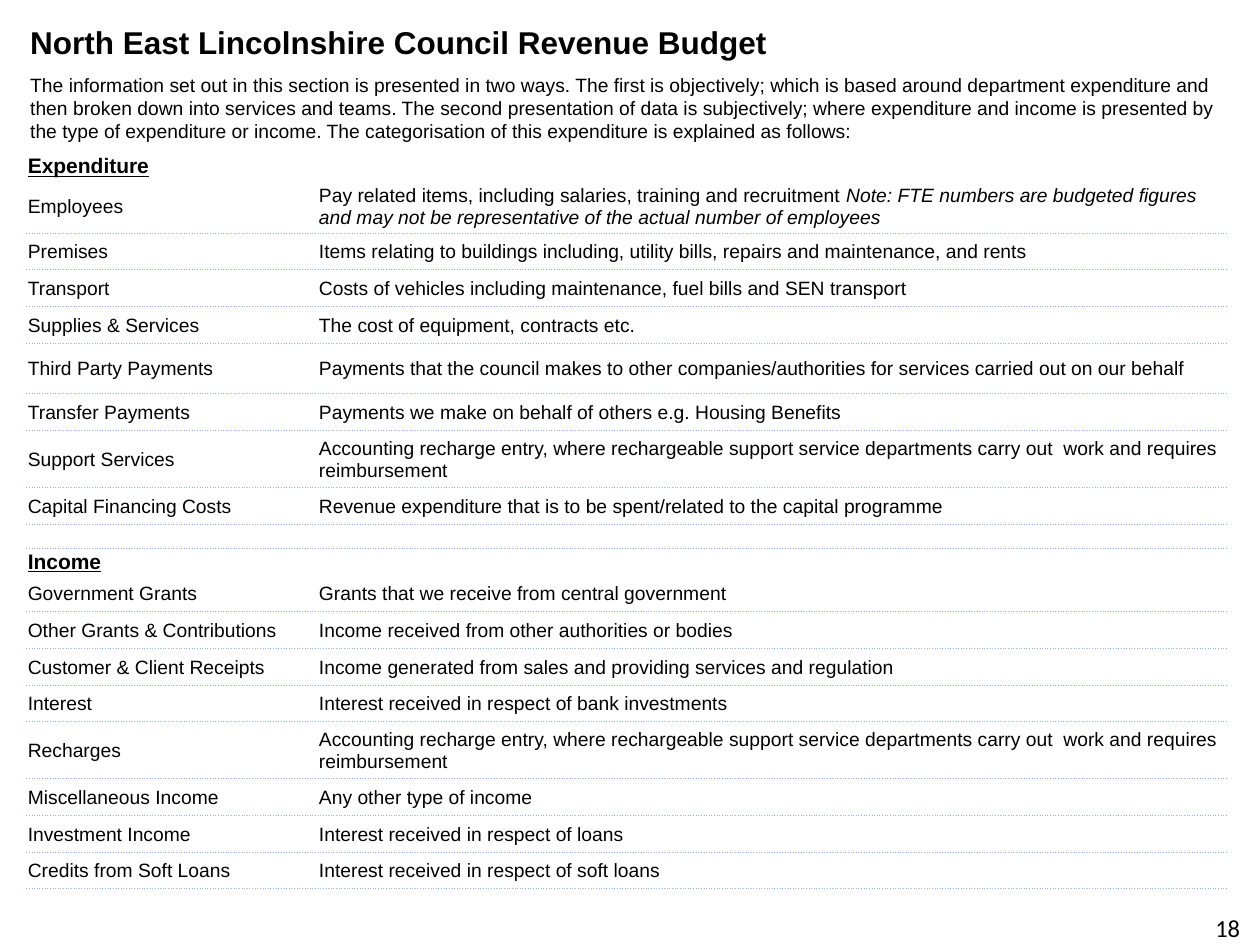
from dataclasses import dataclass

from lxml import etree
from pptx import Presentation
from pptx.dml.color import RGBColor
from pptx.enum.text import MSO_ANCHOR, PP_ALIGN
from pptx.oxml.ns import qn
from pptx.util import Cm, Pt

MIDDLE = MSO_ANCHOR.MIDDLE
LEFT, CENTER = PP_ALIGN.LEFT, PP_ALIGN.CENTER
NO_GRID_STYLE = "{2D5ABB26-0587-4C30-8999-92F81FD0307C}"


@dataclass(frozen=True)
class Theme:
    ink: str = "000000"
    rule: str = "8DB3E2"
    rule_width: float = 0.5
    font: str = "Arial"
    number_font: str = "Calibri"
    title: int = 18
    number: int = 14
    heading: int = 12
    body: int = 11
    spacer: int = 8


COLUMNS = (5.49, 0.38, 16.64, 1.68)
HEADING_ROW, SPACER_ROW, ENTRY_ROW = 0.53, 0.48, 0.74

INTRO = (
    "The information set out in this section is presented in two ways. The first is objectively; "
    "which is based around department expenditure and then broken down into services and teams. "
    "The second presentation of data is subjectively; where expenditure and income is presented by "
    "the type of expenditure or income. The categorisation of this expenditure is explained as follows:"
)
RECHARGE = (
    "Accounting recharge entry, where rechargeable support service departments carry out  "
    "work and requires reimbursement"
)
EMPLOYEE_NOTE = (
    "Note: FTE numbers are budgeted figures and may not be representative of the actual number of employees"
)
SECTIONS = {
    "Expenditure": (
        ("Employees", "Pay related items, including salaries, training and recruitment "),
        ("Premises", "Items relating to buildings including, utility bills, repairs and maintenance, and rents"),
        ("Transport", "Costs of vehicles including maintenance, fuel bills and SEN transport"),
        ("Supplies & Services", "The cost of equipment, contracts etc."),
        ("Third Party Payments", "Payments that the council makes to other companies/authorities "
                                 "for services carried out on our behalf"),
        ("Transfer Payments", "Payments we make on behalf of others e.g. Housing Benefits"),
        ("Support Services", RECHARGE),
        ("Capital Financing Costs", "Revenue expenditure that is to be spent/related to the capital programme"),
    ),
    "Income": (
        ("Government Grants", "Grants that we receive from central government"),
        ("Other Grants & Contributions", "Income received from other authorities or bodies"),
        ("Customer & Client Receipts", "Income generated from sales and providing services and regulation"),
        ("Interest", "Interest received in respect of bank investments"),
        ("Recharges", RECHARGE),
        ("Miscellaneous Income", "Any other type of income"),
        ("Investment Income", "Interest received in respect of loans"),
        ("Credits from Soft Loans", "Interest received in respect of soft loans"),
    ),
}
NOTES = {"Employees": EMPLOYEE_NOTE}
TALL_ROWS = {"Employees": 1.09, "Third Party Payments": 1.02, "Support Services": 1.15, "Recharges": 1.15}


class SlideWriter:
    def __init__(self, slide, theme):
        self.slide = slide
        self.theme = theme

    def style(self, span, size, font=None, bold=False, italic=False, underline=False):
        span.font.name = font or self.theme.font
        span.font.size = Pt(size)
        span.font.color.rgb = RGBColor.from_string(self.theme.ink)
        span.font.bold = bold
        span.font.italic = italic
        span.font.underline = underline

    def text(self, left, top, width, height, words, size, align=LEFT, **look):
        box = self.slide.shapes.add_textbox(Cm(left), Cm(top), Cm(width), Cm(height))
        box.text_frame.word_wrap = True
        box.text_frame.text = words
        para = box.text_frame.paragraphs[0]
        para.alignment = align
        self.style(para.runs[0], size, **look)

    def table(self, left, top, columns, heights):
        frame = self.slide.shapes.add_table(
            len(heights), len(columns), Cm(left), Cm(top), Cm(sum(columns)), Cm(sum(heights)))
        table = frame.table
        table.first_row = table.horz_banding = False
        table._tbl.tblPr.find(qn("a:tableStyleId")).text = NO_GRID_STYLE
        for column, width in zip(table.columns, columns):
            column.width = Cm(width)
        for row, height in zip(table.rows, heights):
            row.height = Cm(height)
        for cell in table.iter_cells():
            cell.margin_left = cell.margin_right = cell.margin_top = Cm(0.03)
            cell.margin_bottom = 0
            cell.vertical_anchor = MIDDLE
            cell.fill.background()
            # An empty cell must not stretch its row
            end = cell.text_frame.paragraphs[0]._p.get_or_add_endParaRPr()
            end.set("sz", str(self.theme.spacer * 100))
        return table

    def cell_text(self, cell, words, size, note=None, **look):
        cell.text_frame.text = words
        para = cell.text_frame.paragraphs[0]
        self.style(para.runs[0], size, **look)
        if note:
            span = para.add_run()
            span.text = note
            self.style(span, size, italic=True)

    def row_rule(self, row, side):
        """Draw a dotted rule along one side, lnT or lnB, of every cell in a row."""
        for cell in row.cells:
            properties = cell._tc.get_or_add_tcPr()
            line = etree.Element(qn(f"a:{side}"), w=str(Pt(self.theme.rule_width)))
            fill = etree.SubElement(line, qn("a:solidFill"))
            etree.SubElement(fill, qn("a:srgbClr"), val=self.theme.rule)
            etree.SubElement(line, qn("a:prstDash"), val="sysDot")
            properties.insert(len(properties.findall(qn("a:lnT"))), line)

    def budget_table(self, left, top):
        rows = []
        for heading, entries in SECTIONS.items():
            if rows:
                rows.append(("spacer", "", "", SPACER_ROW))
            rows.append(("heading", heading, "", HEADING_ROW))
            rows += [("entry", name, meaning, TALL_ROWS.get(name, ENTRY_ROW)) for name, meaning in entries]
        table = self.table(left, top, COLUMNS, [row[-1] for row in rows])
        table.cell(0, 0).merge(table.cell(0, 1))
        previous = None
        for index, (kind, name, meaning, _) in enumerate(rows):
            if index:
                table.cell(index, 2).merge(table.cell(index, 3))
            if previous == "entry":
                self.row_rule(table.rows[index], "lnT")
            if kind == "heading":
                self.cell_text(table.cell(index, 0), name, self.theme.heading, bold=True, underline=True)
            elif kind == "entry":
                self.cell_text(table.cell(index, 0), name, self.theme.body)
                self.cell_text(table.cell(index, 2), meaning, self.theme.body, NOTES.get(name))
                self.row_rule(table.rows[index], "lnB")
            previous = kind


def main():
    deck = Presentation()
    deck.slide_width, deck.slide_height = Cm(25.4), Cm(19.05)
    theme = Theme()
    page = SlideWriter(deck.slides.add_slide(deck.slide_layouts[6]), theme)
    page.text(0.36, 0.33, 24.54, 1.02, "North East Lincolnshire Council Revenue Budget", theme.title, bold=True)
    page.text(0.36, 1.35, 24.54, 1.68, INTRO, theme.body)
    page.budget_table(0.53, 3.07)
    page.text(24.1, 18.29, 1.3, 0.86, "18", theme.number, align=CENTER, font=theme.number_font)
    deck.save("out.pptx")


if __name__ == "__main__":
    main()
